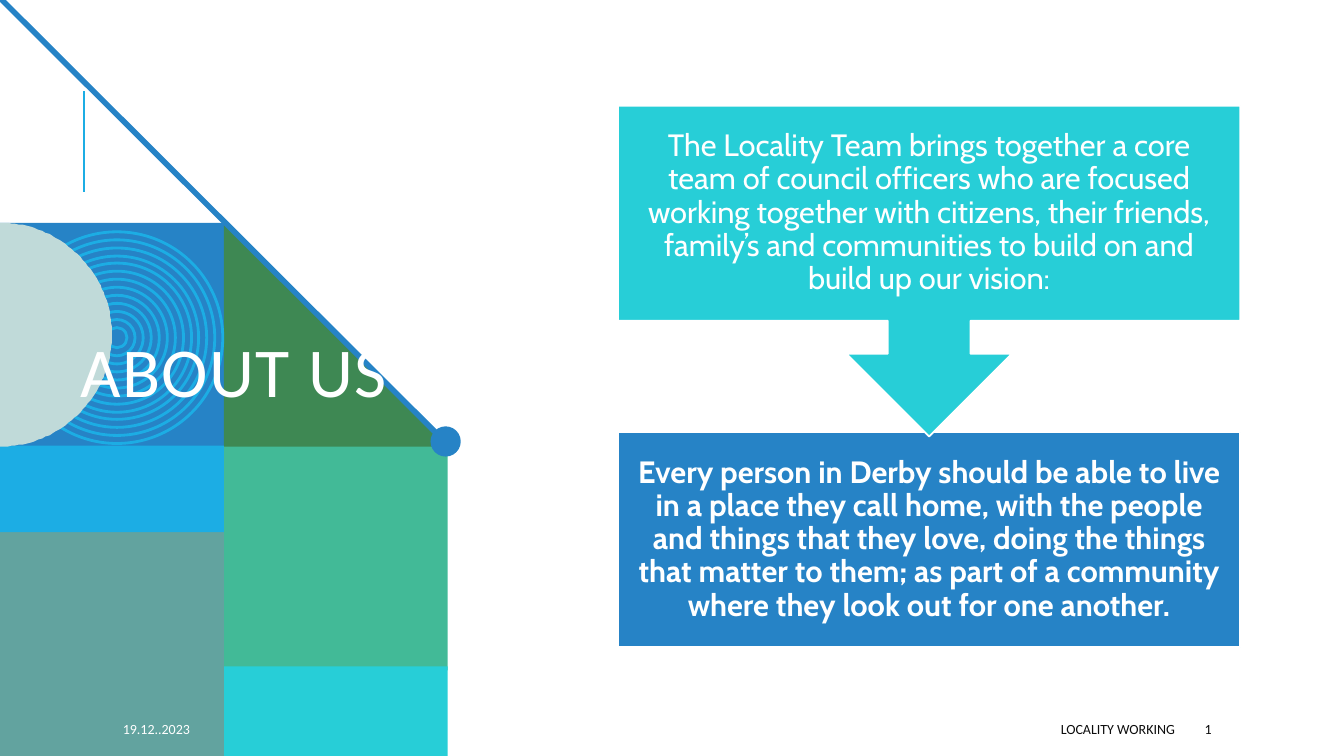
import math

from lxml import etree
from pptx import Presentation
from pptx import util as u
from pptx.dml.color import RGBColor
from pptx.enum import shapes, text
from pptx.oxml.ns import qn

PX = 9144  # EMU per px, 100 px to the inch
WHITE, BLUE, SKY, TURQUOISE = "FFFFFF", "2683C6", "1CADE4", "27CED7"
INK = "0D0D0D"
LEFT, CENTER, RIGHT = text.PP_ALIGN.LEFT, text.PP_ALIGN.CENTER, text.PP_ALIGN.RIGHT
KIND = shapes.MSO_SHAPE


def px(*lengths):
    return [u.Emu(round(n * PX)) for n in lengths]


def color(value):
    return RGBColor.from_string(value)


class Board:
    """Holds the slide and the style of its elements."""

    def __init__(self, slide, heading_font, body_font):
        self.slide = slide
        self.heading_font = heading_font
        self.body_font = body_font

    def paint(self, shape, fill, line, weight):
        shape.shadow.inherit = False
        if fill:
            shape.fill.solid()
            shape.fill.fore_color.rgb = color(fill)
        else:
            shape.fill.background()
        if line:
            shape.line.color.rgb = color(line)
            shape.line.width = u.Pt(weight)
        else:
            shape.line.fill.background()
        return shape

    def shape(self, kind, box, fill=None, line=None, weight=1.25):
        shape = self.slide.shapes.add_shape(kind, *px(*box))
        return self.paint(shape, fill, line, weight)

    def polygon(self, points, fill):
        builder = self.slide.shapes.build_freeform(*points[0], scale=float(PX))
        builder.add_line_segments(points[1:], close=True)
        return self.paint(builder.convert_to_shape(), fill, None, 0)

    def line(self, start, end, stroke, weight):
        line = self.slide.shapes.add_connector(
            shapes.MSO_CONNECTOR.STRAIGHT, *px(*start, *end))
        line.line.color.rgb = color(stroke)
        line.line.width = u.Pt(weight)
        etree.SubElement(line._element.spPr, qn("a:effectLst"))

    def add_words(self, shape, words, size, ink, font, align=LEFT, bold=False,
                  leading=1.0, inset=None):
        frame = shape.text_frame
        frame.word_wrap = True
        frame.vertical_anchor = text.MSO_ANCHOR.MIDDLE
        if inset:
            frame.margin_left, frame.margin_top = px(inset, inset)
            frame.margin_right, frame.margin_bottom = px(inset, inset)
        paragraph = frame.paragraphs[0]
        paragraph.alignment = align
        paragraph.line_spacing = leading
        run = paragraph.add_run()
        run.text = words
        run.font.size = u.Pt(size)
        run.font.name = font
        run.font.bold = bold
        run.font.color.rgb = color(ink)
        return run

    def textbox(self, box):
        return self.slide.shapes.add_textbox(*px(*box))

    def heading(self, box, words):
        run = self.add_words(self.textbox(box), words, 50, WHITE,
                             self.heading_font, leading=0.8)
        run._r.get_or_add_rPr().set("spc", "100")

    def footer(self, box, words, ink, align=LEFT):
        self.add_words(self.textbox(box), words, 10, ink, self.heading_font, align)

    def statement(self, shape, words, bold=False):
        self.add_words(shape, words, 22, WHITE, self.body_font, CENTER, bold,
                       leading=0.9, inset=17)


def main():
    deck = Presentation()
    deck.slide_width, deck.slide_height = px(1333, 750)
    slide = deck.slides.add_slide(deck.slide_layouts[6])
    board = Board(slide, "Calibri", "Cabin")

    # Coloured tiles and the roof of the house
    tile = 222
    board.line((83, 190), (83, 90), SKY, 1.5)
    board.shape(KIND.RECTANGLE, (0, 221, tile, tile), BLUE)
    board.polygon([(tile, tile), (2 * tile, 2 * tile), (tile, 2 * tile)], "3E8853")
    board.shape(KIND.RECTANGLE, (tile, 443, tile, tile), "42BA97")
    board.shape(KIND.RECTANGLE, (tile, 661, tile, 89), TURQUOISE)
    board.shape(KIND.RECTANGLE, (0, 528, tile, tile), "62A39F")

    # Concentric rings, largest at the back
    ring_x, ring_y, ring_count, smallest, largest = 116, 335, 13, 10.5, 105
    step = (largest - smallest) / (ring_count - 1)
    for index in range(ring_count):
        radius = round(largest - index * step)
        board.shape(KIND.OVAL,
                    (ring_x - radius, ring_y - radius, 2 * radius, 2 * radius),
                    line=SKY, weight=2)

    # Sky band, half disc, roof line and its end dot
    board.shape(KIND.RECTANGLE, (0, 442, tile, 86), SKY)
    disc, arc_steps = tile // 2, 90
    angles = [math.pi * i / arc_steps for i in range(arc_steps + 1)]
    board.polygon([(disc * math.sin(a), 332 - disc * math.cos(a)) for a in angles],
                  "C0DAD9")
    board.line((1, -1), (444, 441), BLUE, 4)
    board.shape(KIND.OVAL, (427, 423, 30, 30), BLUE)

    # Title and footer
    board.heading((70, 70, 374, 609), "ABOUT US")
    board.footer((112, 708, 236, 30), "19.12..2023", WHITE)
    board.footer((530, 708, 645, 30), "LOCALITY WORKING", INK, RIGHT)
    board.footer((1185, 708, 106, 30), "1", INK)

    # Vision below, with the team callout pointing down to it
    vision = board.shape(KIND.RECTANGLE, (613, 429, 617, 213), BLUE, WHITE)
    board.statement(
        vision,
        "Every person in Derby should be able to live in a place they call home, "
        "with the people and things that they love, doing the things that matter "
        "to them; as part of a community where they look out for one another.",
        bold=True)
    team = board.shape(KIND.UP_ARROW_CALLOUT, (613, 105, 617, 328), TURQUOISE, WHITE)
    team.rotation = 180
    board.statement(
        board.textbox((613, 105, 617, 213)),
        "The Locality Team brings together a core team of council officers who "
        "are focused working together with citizens, their friends, family’s and "
        "communities to build on and build up our vision:")

    deck.save("out.pptx")


if __name__ == "__main__":
    main()
